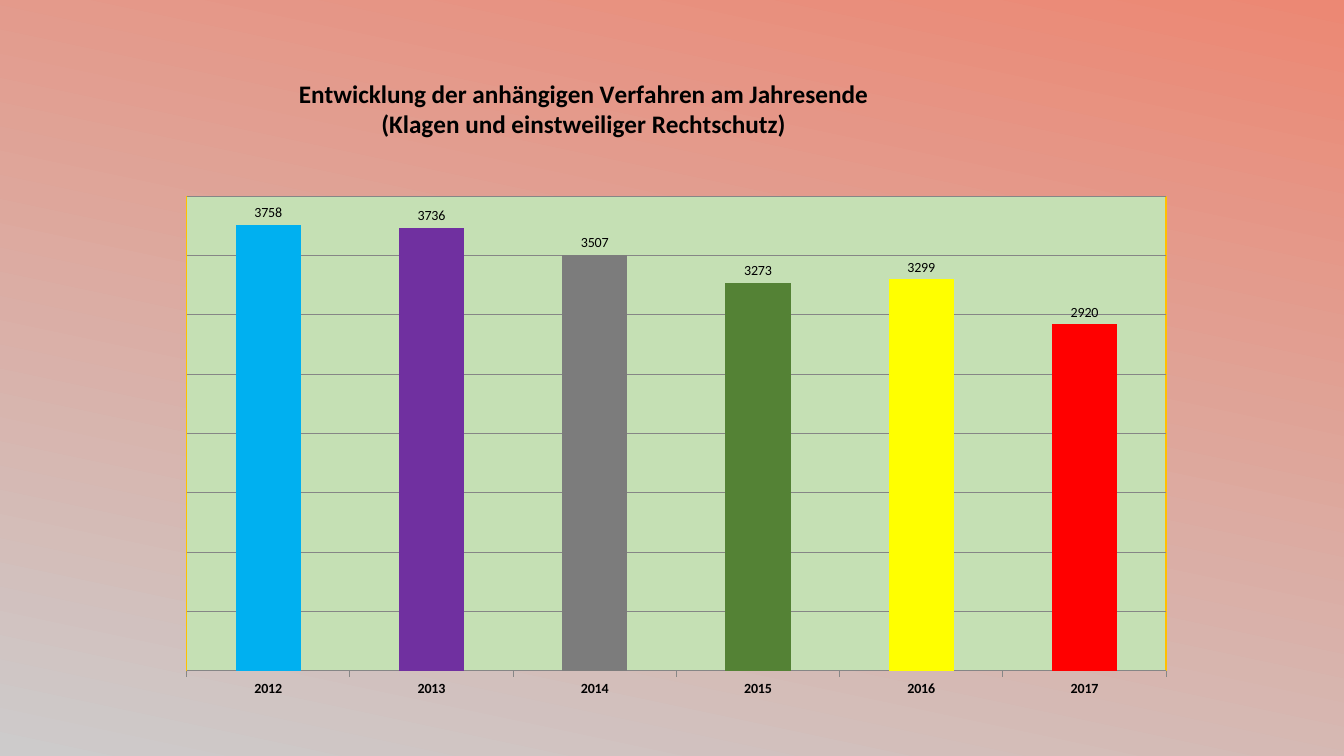
from dataclasses import dataclass
from typing import Any, Optional

from lxml import etree
from pptx import Presentation, util as u
from pptx.chart import data as chart_data
from pptx.dml.color import RGBColor
from pptx.enum import chart as chart_enum
from pptx.oxml import parse_xml
from pptx.oxml.ns import nsdecls, qn


@dataclass(frozen=True)
class YearBar:
    year: str
    pending: int
    colour: str


@dataclass(frozen=True)
class Layout:
    x: float
    y: float
    w: Optional[float] = None
    h: Optional[float] = None


YEARS = [
    YearBar("2012", 3758, "00B0F0"),
    YearBar("2013", 3736, "7030A0"),
    YearBar("2014", 3507, "7C7C7C"),
    YearBar("2015", 3273, "548235"),
    YearBar("2016", 3299, "FFFF00"),
    YearBar("2017", 2920, "FF0000"),
]
TITLE = "Entwicklung der anhängigen Verfahren am Jahresende\n(Klagen und einstweiliger Rechtschutz)"
FONT = {"name": "Calibri", "size": u.Pt(10), "bold": False}
GRID_COLOUR = "868686"


def rgb(colour: str) -> RGBColor:
    return RGBColor.from_string(colour)


def apply_format(target: Any, values: dict[str, Any]) -> None:
    for name, value in values.items():
        setattr(target, name, value)


def format_font(font: Any, **changes: Any) -> None:
    apply_format(font, {**FONT, **changes})
    font.color.rgb = rgb("000000")


def format_line(line: Any, colour: str) -> None:
    line.color.rgb = rgb(colour)
    line.width = u.Pt(0.75)


def set_layout(parent: etree._Element, layout: Layout, index: int, inner: bool = False) -> None:
    for old in parent.findall(qn("c:layout")):
        parent.remove(old)
    sizes = {"x": layout.x, "y": layout.y, "w": layout.w, "h": layout.h}
    target = '<c:layoutTarget val="inner"/>' if inner else ""
    modes = '<c:xMode val="edge"/><c:yMode val="edge"/>'
    values = "".join(f'<c:{name} val="{size}"/>' for name, size in sizes.items() if size is not None)
    parent.insert(index, parse_xml(
        f'<c:layout {nsdecls("c")}><c:manualLayout>{target}{modes}{values}</c:manualLayout></c:layout>'))


def fill_background(slide: Any) -> None:
    fill = slide.background.fill
    fill.gradient()
    fill.gradient_angle = 258
    for stop, (position, colour) in zip(fill.gradient_stops, [(0, "EC8874"), (1, "CDCBCB")]):
        stop.position = position
        stop.color.rgb = rgb(colour)


def add_title(chart: Any) -> None:
    chart.has_title = True
    title = chart.chart_title
    title.include_in_layout = False
    title.text_frame.text = TITLE
    for paragraph in title.text_frame.paragraphs:
        for run in paragraph.runs:
            format_font(run.font, size=u.Pt(18), bold=True)
    set_layout(title.element, Layout(0.16, 0.03), 1)


def format_plot_area(chart: Any) -> None:
    plot_area = chart.element.find(".//" + qn("c:plotArea"))
    set_layout(plot_area, Layout(0.068, 0.208, 0.825, 0.69), 0, inner=True)
    plot_area.append(parse_xml(
        f'<c:spPr {nsdecls("c", "a")}><a:solidFill><a:srgbClr val="C5E0B4"/></a:solidFill>'
        '<a:ln w="12700"><a:solidFill><a:srgbClr val="FFC000"/></a:solidFill></a:ln></c:spPr>'))


def format_axes(chart: Any) -> None:
    apply_format(chart.value_axis, {
        "minimum_scale": 0, "maximum_scale": 4000, "major_unit": 500,
        "has_major_gridlines": True, "visible": False,
    })
    format_line(chart.value_axis.major_gridlines.format.line, GRID_COLOUR)
    years = chart.category_axis
    years.major_tick_mark = chart_enum.XL_TICK_MARK.OUTSIDE
    format_line(years.format.line, GRID_COLOUR)
    format_font(years.tick_labels.font, bold=True)


def format_bars(chart: Any) -> None:
    plot = chart.plots[0]
    apply_format(plot, {"gap_width": 150, "vary_by_categories": False, "has_data_labels": True})
    apply_format(plot.data_labels, {
        "show_value": True, "position": chart_enum.XL_LABEL_POSITION.OUTSIDE_END,
    })
    format_font(plot.data_labels.font)
    for index, bar in enumerate(YEARS):
        fill = plot.series[0].points[index].format.fill
        fill.solid()
        fill.fore_color.rgb = rgb(bar.colour)


def add_pending_chart(slide: Any) -> None:
    data = chart_data.CategoryChartData()
    data.categories = [bar.year for bar in YEARS]
    data.add_series("Series 1", [bar.pending for bar in YEARS])
    chart = slide.shapes.add_chart(
        chart_enum.XL_CHART_TYPE.COLUMN_CLUSTERED,
        u.Pt(75.6), u.Pt(38.16), u.Pt(848.16), u.Pt(491.04), data).chart
    chart.has_legend = False
    format_font(chart.font)
    add_title(chart)
    format_axes(chart)
    format_bars(chart)
    format_plot_area(chart)


def main() -> None:
    presentation = Presentation()
    apply_format(presentation, {"slide_width": u.Pt(960), "slide_height": u.Pt(540)})
    slide = presentation.slides.add_slide(presentation.slide_layouts[6])
    fill_background(slide)
    add_pending_chart(slide)
    presentation.save("out.pptx")


if __name__ == "__main__":
    main()
